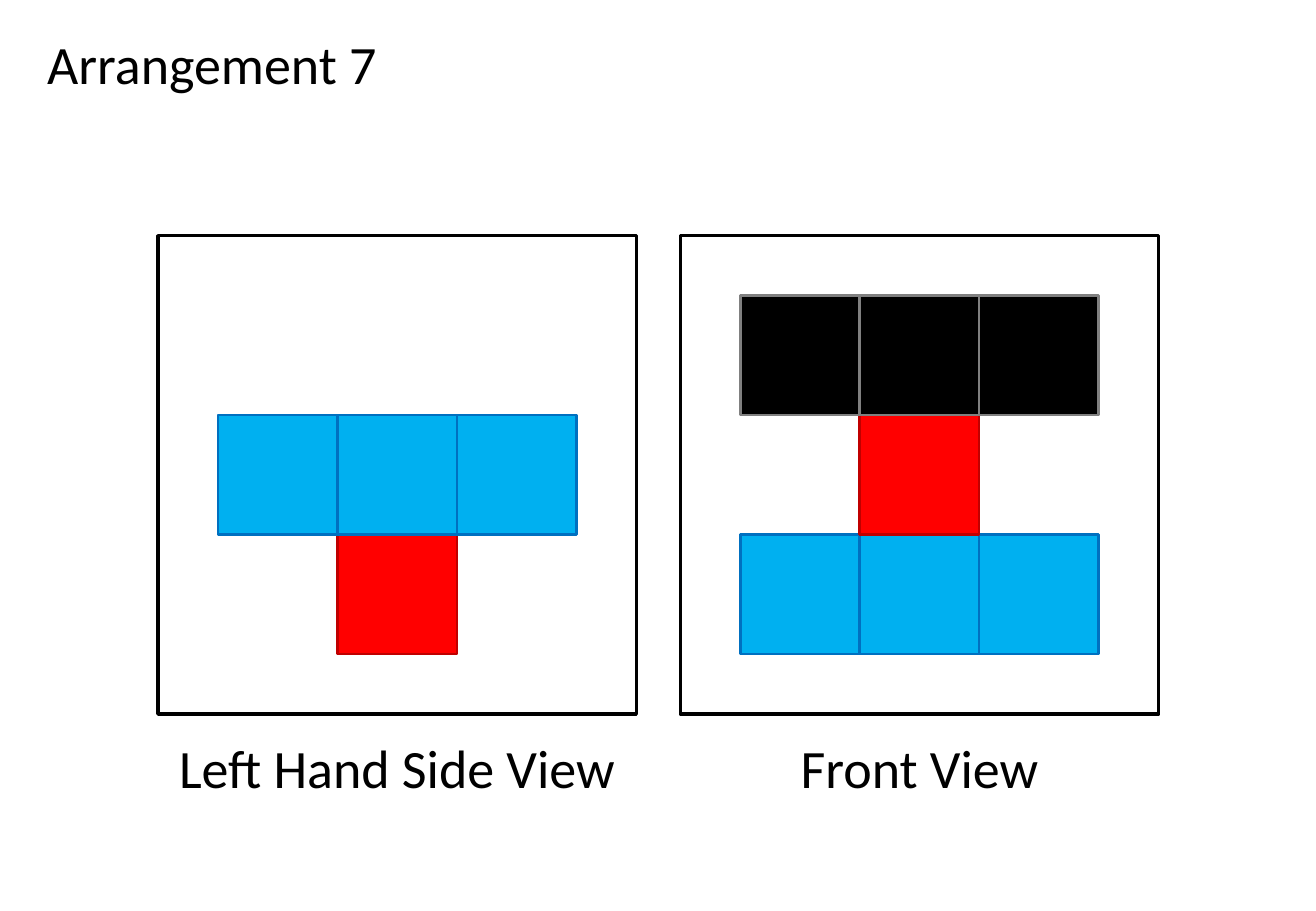
from pptx import Presentation
from pptx.dml.color import RGBColor
from pptx.enum.shapes import MSO_SHAPE
from pptx.enum.text import MSO_ANCHOR, PP_ALIGN
from pptx.util import Pt

COLOURS = {
    "ink": "000000",
    "red": "FF0000", "red edge": "C00000",
    "blue": "00B0F0", "blue edge": "0070C0",
    "black": "000000", "black edge": "808080",
}
PANEL_TOP, PANEL_SIDE = 139.7, 283.6
CUBE_SIDE, GRID_SIZE = 70.8, 3
MARGIN = (PANEL_SIDE - GRID_SIZE * CUBE_SIDE) / 2
LABEL_TOP, LABEL_HEIGHT = 431.3, 46


class ViewSlide:
    font = "Calibri"
    text_size = 32

    def __init__(self, deck):
        self.page = deck.slides.add_slide(deck.slide_layouts[6])

    def colour(self, name):
        return RGBColor.from_string(COLOURS[name])

    def text(self, left, top, width, words, align=PP_ALIGN.LEFT, spacing=1.0):
        box = self.page.shapes.add_textbox(
            Pt(left), Pt(top), Pt(width), Pt(LABEL_HEIGHT))
        frame = box.text_frame
        frame.word_wrap = True
        frame.vertical_anchor = MSO_ANCHOR.MIDDLE
        para = frame.paragraphs[0]
        para.alignment = align
        para.line_spacing = spacing
        span = para.add_run()
        span.text = words
        span.font.name = self.font
        span.font.size = Pt(self.text_size)
        span.font.color.rgb = self.colour("ink")

    def square(self, left, top, side, edge, weight, fill=None):
        shape = self.page.shapes.add_shape(
            MSO_SHAPE.RECTANGLE, Pt(left), Pt(top), Pt(side), Pt(side))
        shape.shadow.inherit = False
        if fill:
            shape.fill.solid()
            shape.fill.fore_color.rgb = self.colour(fill)
        else:
            shape.fill.background()
        shape.line.color.rgb = self.colour(edge)
        shape.line.width = Pt(weight)

    def view(self, left, label, cubes):
        """Draw a framed, labelled view from (row, colour, columns) entries."""
        self.text(left, LABEL_TOP, PANEL_SIDE, label, PP_ALIGN.CENTER)
        self.square(left, PANEL_TOP, PANEL_SIDE, "ink", 2)
        for row, colour, columns in cubes:
            for column in columns:
                self.square(left + MARGIN + column * CUBE_SIDE,
                            PANEL_TOP + MARGIN + row * CUBE_SIDE,
                            CUBE_SIDE, f"{colour} edge", 1.5, colour)


def main():
    deck = Presentation()
    deck.slide_width, deck.slide_height = Pt(780), Pt(540)
    slide = ViewSlide(deck)

    # Title
    slide.text(20.9, 16.6, 265, "Arrangement 7", spacing=0.9)

    # Views, each stacked from the bottom row up
    slide.view(93.6, "Left Hand Side View",
               [(2, "red", [1]), (1, "blue", [1, 0, 2])])
    slide.view(403.2, "Front View",
               [(2, "blue", [1, 0, 2]), (1, "red", [1]),
                (0, "black", [1, 0, 2])])

    deck.save("out.pptx")


if __name__ == "__main__":
    main()
